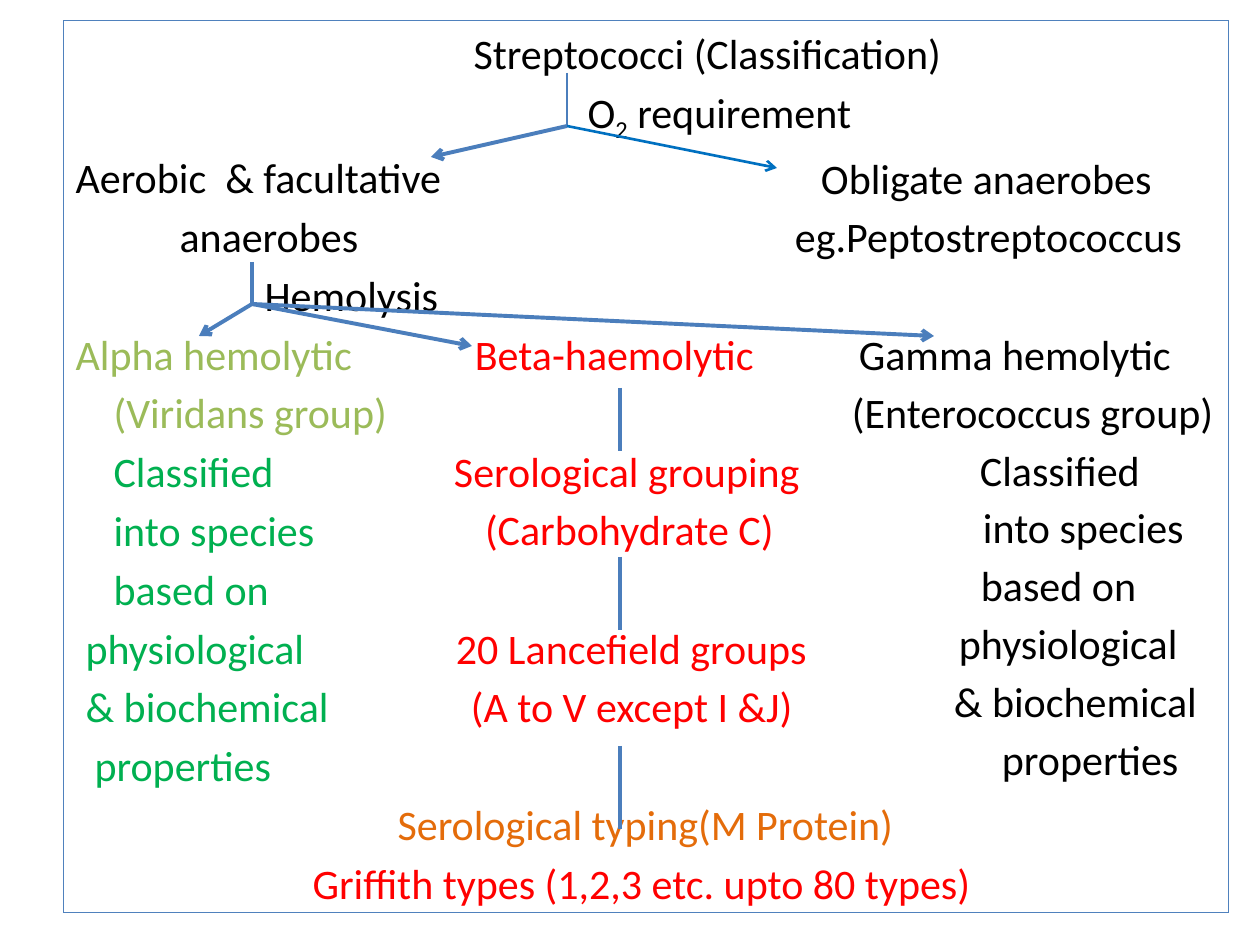
from lxml import etree
from pptx import Presentation
from pptx.dml.color import RGBColor
from pptx.enum.shapes import MSO_CONNECTOR
from pptx.enum.text import MSO_ANCHOR, MSO_AUTO_SIZE
from pptx.oxml.ns import qn
from pptx.util import Emu, Pt

STRAIGHT = MSO_CONNECTOR.STRAIGHT
TOP = MSO_ANCHOR.TOP
NO_FIT = MSO_AUTO_SIZE.NONE

BLACK = RGBColor(0x00, 0x00, 0x00)
OLIVE = RGBColor(0x9B, 0xBB, 0x59)
GREEN = RGBColor(0x00, 0xB0, 0x50)
RED = RGBColor(0xFF, 0x00, 0x00)
ORANGE = RGBColor(0xE4, 0x6C, 0x0A)
FRAME = RGBColor(0x4F, 0x81, 0xBD)
STEEL = RGBColor(0x4B, 0x7E, 0xBC)
BLUE = RGBColor(0x00, 0x70, 0xC0)

BOX = (63, 21, 1166, 892)
LEFT = 76
BASE = 146
PITCH = 58.75

MAIN = [
    (474, "Streptococci (Classification)", BLACK),
    (588, "O_2_ requirement", BLACK),
    (LEFT, "Aerobic  & facultative", BLACK),
    (180, "anaerobes", BLACK),
    (265, "Hemolysis", BLACK),
    (LEFT, "Alpha hemolytic", OLIVE),
    (114, "(Viridans group)", OLIVE),
    (114, "Classified", GREEN),
    (114, "into species", GREEN),
    (114, "based on", GREEN),
    (86, "physiological", GREEN),
    (86, "& biochemical", GREEN),
    (95, "properties", GREEN),
    (398, "Serological typing(M Protein)", ORANGE),
    (313, "Griffith types (1,2,3 etc. upto 80 types)", RED),
]

BLOCKS = [
    (0, 1240, [(821, "Obligate anaerobes", BLACK),
               (795, "eg.Peptostreptococcus", BLACK)]),
    (3, 840, [(475, "Beta-haemolytic", RED)]),
    (5, 840, [(454, "Serological grouping", RED),
              (485, "(Carbohydrate C)", RED)]),
    (8, 840, [(456, "20 Lancefield groups", RED),
              (471, "(A to V except I &J)", RED)]),
    (3, 1240, [(859, "Gamma hemolytic", BLACK),
               (852, "(Enterococcus group)", BLACK),
               (980, "Classified", BLACK),
               (983, "into species", BLACK),
               (981, "based on", BLACK),
               (959, "physiological", BLACK),
               (954, "& biochemical", BLACK),
               (1002, "properties", BLACK)]),
]

FORK = (567, 126)
SPLIT = (252, 304)
MID = 620
LINES = [
    ((567, 73), FORK, STEEL, 1.5, False),
    (FORK, (431, 157), STEEL, 2.25, True),
    (FORK, (777, 168), BLUE, 1.5, True),
    ((252, 262), SPLIT, STEEL, 2.25, False),
]
LINES += [(SPLIT, end, STEEL, 2.25, True)
          for end in [(199, 336), (472, 346), (934, 336)]]
LINES += [((MID, top), (MID, low), STEEL, 2.25, False)
          for top, low in [(388, 451), (557, 630), (746, 829)]]


def px(n):
    return Emu(round(n * 914400 / 126))


def fill(frame, rows, left):
    frame.word_wrap = True
    frame.auto_size = NO_FIT
    frame.vertical_anchor = TOP
    for i, (x, text, color) in enumerate(rows):
        para = frame.add_paragraph() if i else frame.paragraphs[0]
        props = para._p.get_or_add_pPr()
        props.set("marL", str(px(x - left)))
        props.set("indent", "0")
        etree.SubElement(props, qn("a:buNone"))
        for j, part in enumerate(text.split("_")):
            run = para.add_run()
            run.text = part
            run.font.name = "Calibri"
            run.font.size = Pt(24)
            run.font.color.rgb = color
            if j == 1:
                run._r.get_or_add_rPr().set("baseline", "-25000")


def add_block(slide, row, right, rows):
    left = min(x for x, _, _ in rows)
    area = (left, BASE + row * PITCH, right - left, len(rows) * PITCH + 12)
    frame = slide.shapes.add_textbox(*map(px, area)).text_frame
    frame.margin_left = frame.margin_right = 0
    fill(frame, rows, left)
    for para in frame.paragraphs[1:]:
        para.space_before = Pt(4.27)


def add_line(slide, start, end, color, width, arrow):
    line = slide.shapes.add_connector(STRAIGHT, *map(px, start + end))
    line.line.color.rgb = color
    line.line.width = Pt(width)
    if arrow:
        etree.SubElement(line.line._get_or_add_ln(), qn("a:tailEnd"), type="arrow")
    etree.SubElement(line._element.spPr, qn("a:effectLst"))


def main():
    deck = Presentation()
    deck.slide_width, deck.slide_height = px(1260), px(945)
    slide = deck.slides.add_slide(deck.slide_layouts[1])
    title = slide.shapes.title._element
    title.getparent().remove(title)

    body = slide.placeholders[1]
    body.left, body.top, body.width, body.height = map(px, BOX)
    body.line.color.rgb = FRAME
    fill(body.text_frame, MAIN, LEFT)

    for block in BLOCKS:
        add_block(slide, *block)
    for item in LINES:
        add_line(slide, *item)
    deck.save("out.pptx")


if __name__ == "__main__":
    main()
